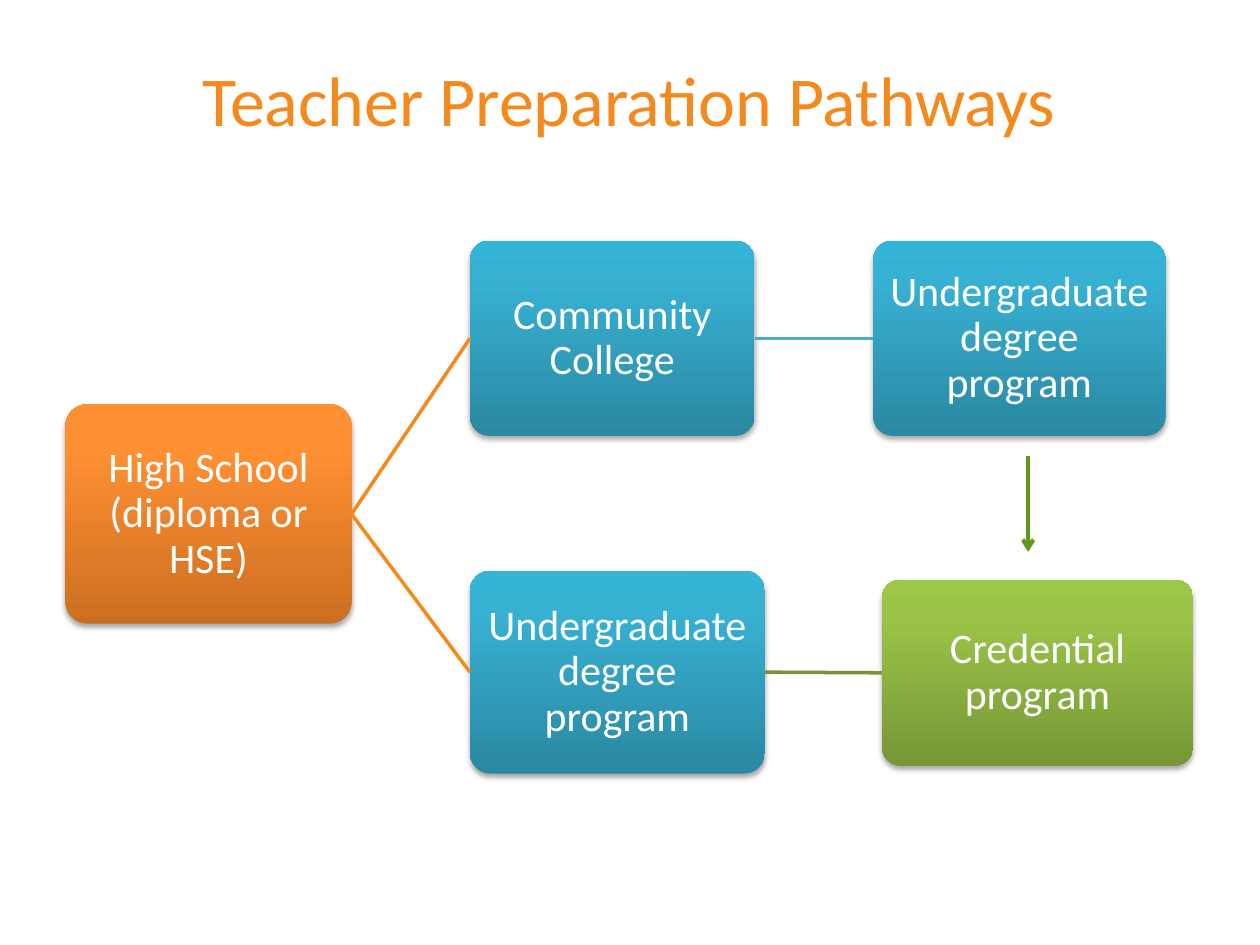
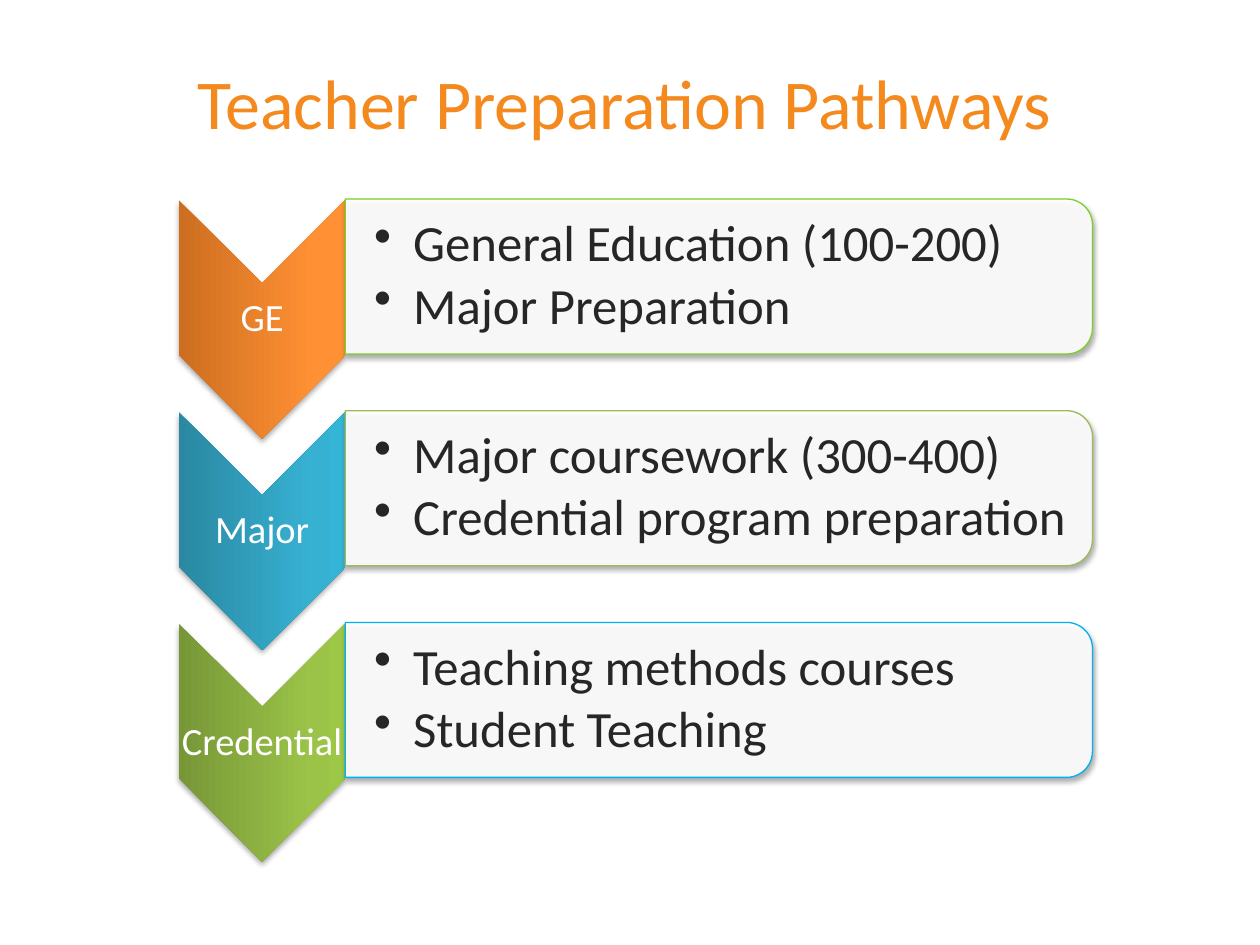
from dataclasses import dataclass

from lxml.etree import SubElement
from pptx import Presentation
from pptx.dml.color import RGBColor
from pptx.enum.shapes import MSO_CONNECTOR, MSO_SHAPE
from pptx.enum.text import MSO_ANCHOR, PP_ALIGN
from pptx.oxml.ns import qn
from pptx.shapes.autoshape import Shape
from pptx.shapes.connector import Connector
from pptx.slide import Slide
from pptx.text.text import TextFrame
from pptx.util import Inches, Pt

ROUND = MSO_SHAPE.ROUNDED_RECTANGLE
CHEVRON = MSO_SHAPE.CHEVRON
PANEL = MSO_SHAPE.ROUND_2_SAME_RECTANGLE
STRAIGHT = MSO_CONNECTOR.STRAIGHT
MIDDLE = MSO_ANCHOR.MIDDLE
CENTER, LEFT = PP_ALIGN.CENTER, PP_ALIGN.LEFT

FONT = "Calibri"
WHITE = RGBColor(0xFF, 0xFF, 0xFF)
INK = RGBColor(0x26, 0x26, 0x26)
ORANGE = RGBColor(0xF4, 0x89, 0x1E)
TEAL = RGBColor(0x4B, 0xAC, 0xC6)
OLIVE = RGBColor(0x77, 0x93, 0x3C)
GREEN = RGBColor(0x5C, 0x9B, 0x1D)
LIME = RGBColor(0x7B, 0xCF, 0x27)
MOSS = RGBColor(0x9B, 0xBB, 0x59)
SKY = RGBColor(0x00, 0xB0, 0xF0)

Ramp = tuple[RGBColor, RGBColor, RGBColor]
WARM: Ramp = (RGBColor(0xCC, 0x6E, 0x20), RGBColor(0xFF, 0x90, 0x34), RGBColor(0xFF, 0x91, 0x36))
BLUE: Ramp = (RGBColor(0x2A, 0x88, 0xA2), RGBColor(0x37, 0xB1, 0xD2), RGBColor(0x34, 0xB4, 0xD6))
LEAF: Ramp = (RGBColor(0x77, 0x97, 0x37), RGBColor(0x9B, 0xC3, 0x48), RGBColor(0x9D, 0xC7, 0x46))
STOPS = (0, 80000, 100000)

TITLE = "Teacher Preparation Pathways"
PAD = 0.02


@dataclass(frozen=True)
class Box:
    left: float
    top: float
    width: float
    height: float

    def place(self) -> tuple[int, int, int, int]:
        return Inches(self.left), Inches(self.top), Inches(self.width), Inches(self.height)

    def turn(self) -> "Box":
        shift = (self.width - self.height) / 2
        return Box(self.left + shift, self.top - shift, self.height, self.width)


@dataclass(frozen=True)
class Step:
    text: str
    box: Box
    ramp: Ramp


@dataclass(frozen=True)
class Link:
    start: int
    end: int
    color: RGBColor


@dataclass(frozen=True)
class Stage:
    label: str
    ramp: Ramp
    edge: RGBColor
    points: tuple[str, ...]


STEPS = (
    Step("High School (diploma or HSE)", Box(0.52, 3.21, 2.27, 1.74), WARM),
    Step("Community College", Box(3.73, 1.91, 2.26, 1.55), BLUE),
    Step("Undergraduate degree program", Box(6.93, 1.91, 2.32, 1.55), BLUE),
    Step("Undergraduate degree program", Box(3.73, 4.53, 2.34, 1.61), BLUE),
    Step("Credential program", Box(7, 4.6, 2.47, 1.48), LEAF),
)
LINKS = (
    Link(0, 1, ORANGE),
    Link(1, 2, TEAL),
    Link(0, 3, ORANGE),
    Link(3, 4, OLIVE),
)
STAGES = (
    Stage("GE", WARM, LIME, ("General Education (100-200)", "Major Preparation")),
    Stage("Major", BLUE, MOSS, ("Major coursework (300-400)", "Credential program preparation")),
    Stage("Credential", LEAF, SKY, ("Teaching methods courses", "Student Teaching")),
)
FIRST, PITCH = 1.58, 1.68


def add_title(deck, box: Box) -> Slide:
    slide = deck.slides.add_slide(deck.slide_layouts[5])
    title = slide.shapes.title
    title.left, title.top, title.width, title.height = box.place()
    write(title.text_frame, (TITLE,), 40, ORANGE)
    return slide


def write(frame: TextFrame, lines: tuple[str, ...], size: float, color: RGBColor,
          align: PP_ALIGN = CENTER, space: float = 1, after: float = 0) -> None:
    frame.word_wrap = True
    frame.vertical_anchor = MIDDLE
    frame.text = "\n".join(lines)
    for para in frame.paragraphs:
        para.alignment = align
        para.line_spacing = space
        para.space_after = Pt(after)
        for run in para.runs:
            run.font.name = FONT
            run.font.size = Pt(size)
            run.font.color.rgb = color


def inset(frame: TextFrame, side: float, left: float) -> None:
    frame.margin_left = Inches(left)
    frame.margin_top = frame.margin_right = frame.margin_bottom = Inches(side)


def add_text(slide: Slide, box: Box, left: float = PAD) -> TextFrame:
    frame = slide.shapes.add_textbox(*box.place()).text_frame
    inset(frame, PAD, left)
    return frame


def add_form(slide: Slide, kind: MSO_SHAPE, box: Box) -> Shape:
    shape = slide.shapes.add_shape(kind, *box.place())
    shape.shadow.inherit = False
    glow = SubElement(shape._element.spPr.find(qn("a:effectLst")), qn("a:outerShdw"),
                      blurRad="40000", dist="23000", dir="5400000", rotWithShape="0")
    tint = SubElement(glow, qn("a:srgbClr"), val="000000")
    SubElement(tint, qn("a:alpha"), val="35000")
    return shape


def blend(shape: Shape, ramp: Ramp) -> None:
    shape.line.fill.background()
    shape.fill.gradient()
    shape.fill.gradient_angle = 90
    stops = shape._element.spPr.find(qn("a:gradFill")).find(qn("a:gsLst"))
    for old in list(stops):
        stops.remove(old)
    for spot, color in zip(STOPS, ramp):
        stop = SubElement(stops, qn("a:gs"), pos=str(spot))
        SubElement(stop, qn("a:srgbClr"), val=str(color))


def add_step(slide: Slide, step: Step) -> Shape:
    shape = add_form(slide, ROUND, step.box)
    shape.adjustments[0] = 0.1
    blend(shape, step.ramp)
    inset(shape.text_frame, 0.07, 0.07)
    write(shape.text_frame, (step.text,), 24, WHITE, space=0.9)
    return shape


def add_line(slide: Slide, start: tuple[float, float], end: tuple[float, float],
             color: RGBColor, width: float) -> Connector:
    line = slide.shapes.add_connector(STRAIGHT, *(Inches(n) for n in start + end))
    line.line.color.rgb = color
    line.line.width = Pt(width)
    SubElement(line._element.spPr, qn("a:effectLst"))
    return line


def add_link(slide: Slide, link: Link, shapes: list[Shape]) -> None:
    line = add_line(slide, (0, 0), (1, 1), link.color, 2)
    line.begin_connect(shapes[link.start], 3)
    line.end_connect(shapes[link.end], 1)


def add_stage(slide: Slide, stage: Stage, top: float) -> None:
    arrow = add_form(slide, CHEVRON, Box(1.42, top + 0.01, 1.32, 1.89).turn())
    arrow.rotation = 90
    blend(arrow, stage.ramp)
    label = add_text(slide, Box(1.42, top + 0.67, 1.32, 0.57))
    write(label, (stage.label,), 22, WHITE, space=0.9)

    panel = add_form(slide, PANEL, Box(2.74, top, 5.93, 1.23).turn())
    panel.rotation = 90
    panel.fill.solid()
    panel.fill.fore_color.rgb = WHITE
    tint = panel._element.spPr.find(qn("a:solidFill")).find(qn("a:srgbClr"))
    SubElement(tint, qn("a:alpha"), val="90000")
    panel.line.color.rgb = stage.edge
    panel.line.width = Pt(0.75)

    frame = add_text(slide, Box(2.74, top + 0.06, 5.87, 1.11), 0.23)
    write(frame, stage.points, 29, INK, LEFT, 0.9, 4.35)
    for para in frame.paragraphs:
        props = para._p.get_or_add_pPr()
        props.set("marL", str(Inches(0.31)))
        props.set("indent", str(-Inches(0.31)))
        SubElement(props, qn("a:buChar"), char="•")


def draw_paths(deck) -> None:
    slide = add_title(deck, Box(0.74, 0.4, 8.5, 0.77))
    shapes = [add_step(slide, step) for step in STEPS]
    for link in LINKS:
        add_link(slide, link, shapes)
    arrow = add_line(slide, (8.16, 3.62), (8.16, 4.38), GREEN, 2.25)
    SubElement(arrow._element.spPr.find(qn("a:ln")), qn("a:tailEnd"), type="arrow")


def draw_stages(deck) -> None:
    slide = add_title(deck, Box(0.58, 0.42, 8.75, 0.77))
    for row, stage in enumerate(STAGES):
        add_stage(slide, stage, FIRST + row * PITCH)


def main() -> None:
    deck = Presentation()
    deck.slide_width, deck.slide_height = Inches(10), Inches(7.5)
    draw_paths(deck)
    draw_stages(deck)
    deck.save("out.pptx")


if __name__ == "__main__":
    main()
